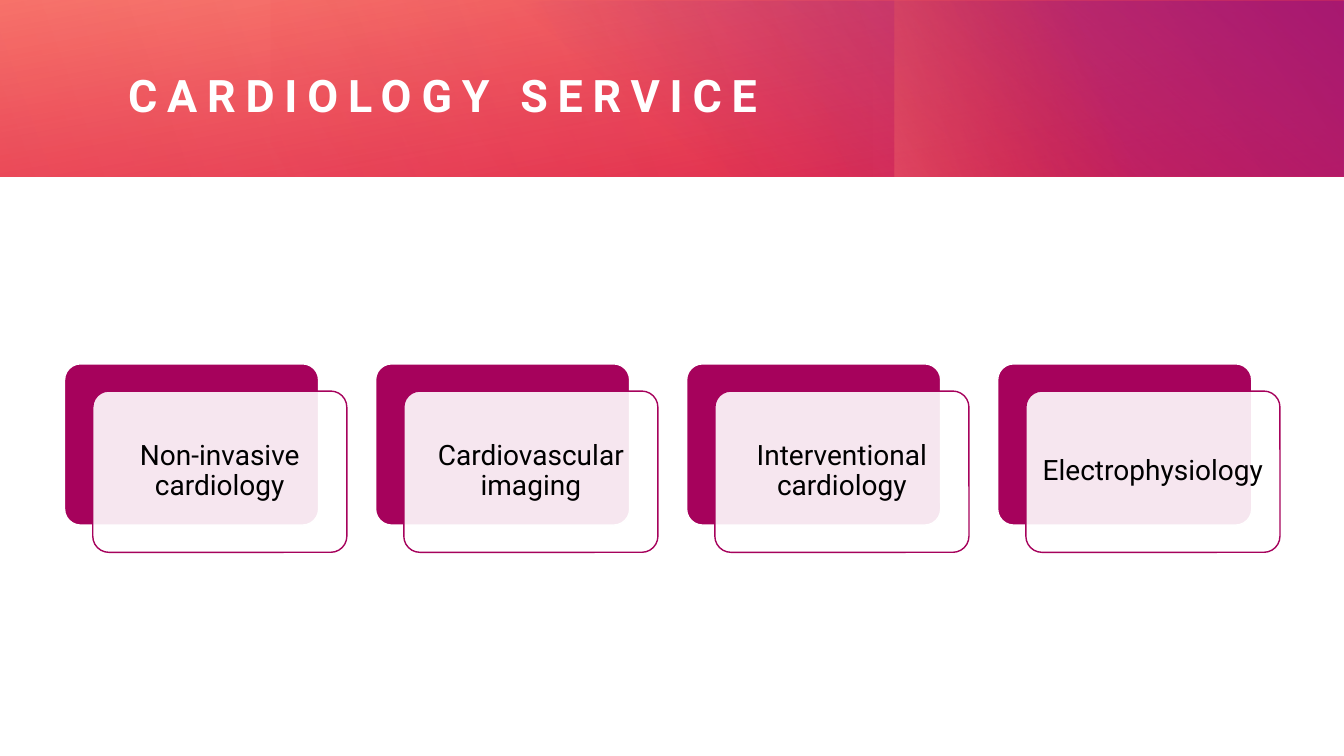
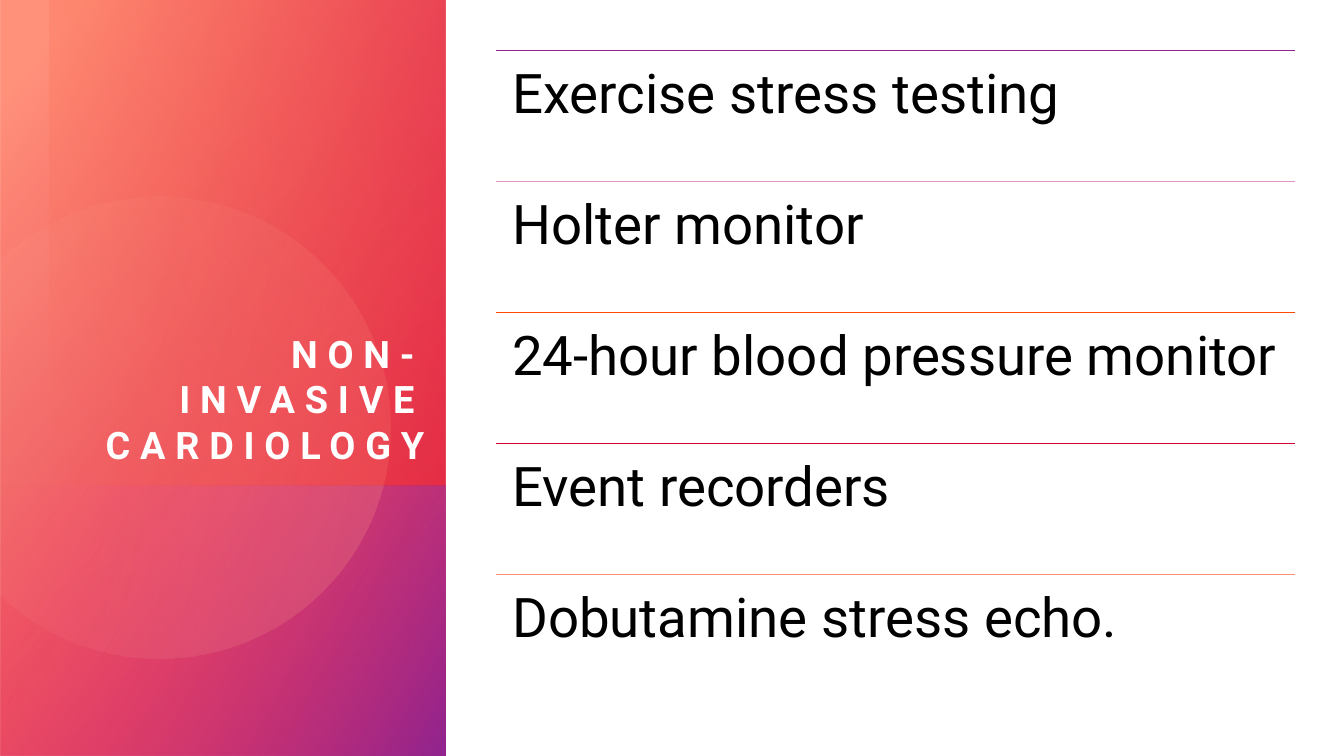
import math
import pptx
import pptx.util
import pptx.dml.color
import pptx.enum.shapes
import pptx.enum.text
import pptx.oxml.ns
from lxml import etree

Inches = pptx.util.Inches
Pt = pptx.util.Pt
qn = pptx.oxml.ns.qn
KIND = pptx.enum.shapes.MSO_SHAPE
ALIGN = pptx.enum.text.PP_ALIGN
ANCHOR = pptx.enum.text.MSO_ANCHOR

FONT = "Roboto"
HUES = {
    "white": "FFFFFF", "black": "000000", "berry": "A6025C",
    "red": "DA002F", "salmon": "FF907A", "purple": "92248E",
    "orange": "FE4A00", "pink": "FF5076", "peach": "FFBCAF",
    "mauve": "DE95C4",
}

# box, turn, flip, angle, stops of (position, hue, opacity)
BAND = [
    ((0, 0, 13.33, 1.75), 0, False, 260, [(0, "red", 83), (100, "salmon", 100)]),
    ((4.81, 0.01, 8.52, 1.74), 0, False, 310, [(22, "purple", 0), (99, "purple", 100)]),
    ((9.87, -0.99, 1.75, 3.74), 270, False, 250, [(45, "orange", 0), (99, "salmon", 33)]),
    ((2.68, 0, 10.64, 1.75), 180, False, 330, [(0, "red", 30), (99, "red", 0)]),
    ((0, 0, 8.65, 1.75), 0, False, 340, [(0, "red", 21), (99, "red", 0)]),
]
PANEL = [
    ((-1.54, 1.54, 7.5, 4.42), 270, True, 50, [(8, "salmon", 100), (100, "red", 89)]),
    ((0.86, 3.95, 2.69, 4.42), 270, True, 60, [(0, "pink", 0), (99, "purple", 100)]),
]
GLOW = ((0.05, 0.45, 4.81, 3.92), 90, True, 110, [(0, "red", 29), (100, "orange", 0)])
DISC = {"x": 1.58, "y": 4.24, "r": 2.29, "angle": 14,
        "stops": [(36, "peach", 6), (100, "salmon", 26)]}

CARDS = ["Non-invasive cardiology", "Cardiovascular imaging",
         "Interventional cardiology", "Electrophysiology"]
TESTS = [("Exercise stress testing", "purple"), ("Holter monitor", "mauve"),
         ("24-hour blood pressure monitor", "orange"),
         ("Event recorders", "red"), ("Dobutamine stress echo.", "salmon")]


def rgb(hue):
    return pptx.dml.color.RGBColor.from_string(HUES[hue])


def fade(shape, levels):
    for node, level in zip(shape.element.xpath("./p:spPr//a:srgbClr"), levels):
        if level < 100:
            etree.SubElement(node, qn("a:alpha")).set("val", str(level * 1000))


def blend(shape, angle, stops):
    shape.shadow.inherit = False
    shape.line.fill.background()
    shape.fill.gradient()
    shape.fill.gradient_angle = 360 - angle
    for stop, (place, hue, level) in zip(shape.fill.gradient_stops, stops):
        stop.position = place / 100
        stop.color.rgb = rgb(hue)
    fade(shape, [level for place, hue, level in stops])


def wash(slide, box, turn, flip, angle, stops):
    shape = slide.shapes.add_shape(KIND.RECTANGLE, *map(Inches, box))
    shape.rotation = turn
    if flip:
        shape.element.xpath("./p:spPr/a:xfrm")[0].set("flipH", "1")
    blend(shape, angle, stops)


def write(shape, text, size, hue, align, anchor, pad):
    frame = shape.text_frame
    frame.word_wrap = True
    frame.vertical_anchor = anchor
    frame.margin_left = frame.margin_top = Inches(pad)
    frame.margin_right = frame.margin_bottom = Inches(pad)
    para = frame.paragraphs[0]
    para.alignment = align
    run = para.add_run()
    run.text = text
    run.font.name = FONT
    run.font.size = Pt(size)
    run.font.color.rgb = rgb(hue)
    return para, run


def body(shape, text, size, align, anchor, pad):
    para, run = write(shape, text, size, "black", align, anchor, pad)
    para.line_spacing = 0.9
    after = etree.SubElement(para._p.get_or_add_pPr(), qn("a:spcAft"))
    etree.SubElement(after, qn("a:spcPct")).set("val", "35000")


def title(slide, box, text, size, align, anchor):
    shape = slide.shapes.add_textbox(*map(Inches, box))
    para, run = write(shape, text, size, "white", align, anchor, 0)
    run.font.bold = True
    run._r.get_or_add_rPr().set("spc", "700")


def card(slide, left, top, fill, line):
    shape = slide.shapes.add_shape(
        KIND.ROUNDED_RECTANGLE, Inches(left), Inches(top), Inches(2.52), Inches(1.6))
    shape.adjustments[0] = 0.1
    shape.shadow.inherit = False
    shape.fill.solid()
    shape.fill.fore_color.rgb = rgb(fill)
    shape.line.color.rgb = rgb(line)
    shape.line.width = Pt(1)
    return shape


def disc(slide):
    x, y, r = DISC["x"], DISC["y"], DISC["r"]
    edge = math.acos(-x / r)
    count = 120
    turns = [edge * (2 * i / count - 1) for i in range(count + 1)]
    dots = [(Inches(x + r * math.cos(t)), Inches(y + r * math.sin(t))) for t in turns]
    path = slide.shapes.build_freeform(*dots[0])
    path.add_line_segments(dots[1:], close=True)
    blend(path.convert_to_shape(), DISC["angle"], DISC["stops"])


def rule(slide, left, top, wide, hue):
    line = slide.shapes.add_connector(
        pptx.enum.shapes.MSO_CONNECTOR.STRAIGHT,
        Inches(left), Inches(top), Inches(left + wide), Inches(top))
    line.line.color.rgb = rgb(hue)
    line.line.width = Pt(1)
    etree.SubElement(line.element.spPr, qn("a:effectLst"))


def service(slide):
    for part in BAND:
        wash(slide, *part)
    title(slide, (1.27, 0.41, 11.35, 1.06), "CARDIOLOGY SERVICE", 32,
          ALIGN.LEFT, ANCHOR.MIDDLE)
    for i, text in enumerate(CARDS):
        left = 0.64 + 3.085 * i
        card(slide, left, 3.61, "berry", "white")
        front = card(slide, left + 0.28, 3.88, "white", "berry")
        fade(front, [90])
        body(front, text, 20, ALIGN.CENTER, ANCHOR.MIDDLE, 0.08)


def tests(slide):
    for part in PANEL:
        wash(slide, *part)
    disc(slide)
    wash(slide, *GLOW)
    title(slide, (0.5, 0.95, 3.71, 3.68), "NON-INVASIVE CARDIOLOGY", 27,
          ALIGN.RIGHT, ANCHOR.BOTTOM)
    left, wide, step = 4.92, 7.92, 1.3
    for i, (text, hue) in enumerate(TESTS):
        top = 0.5 + step * i
        rule(slide, left, top, wide, hue)
        shape = slide.shapes.add_textbox(
            Inches(left), Inches(top), Inches(wide), Inches(step))
        body(shape, text, 39, ALIGN.LEFT, ANCHOR.TOP, 0.16)
        shape.text_frame.margin_right = Inches(0.1)


def main():
    deck = pptx.Presentation()
    deck.slide_width = Inches(13.33)
    deck.slide_height = Inches(7.5)
    for build in (service, tests):
        build(deck.slides.add_slide(deck.slide_layouts[6]))
    deck.save("out.pptx")


if __name__ == "__main__":
    main()
